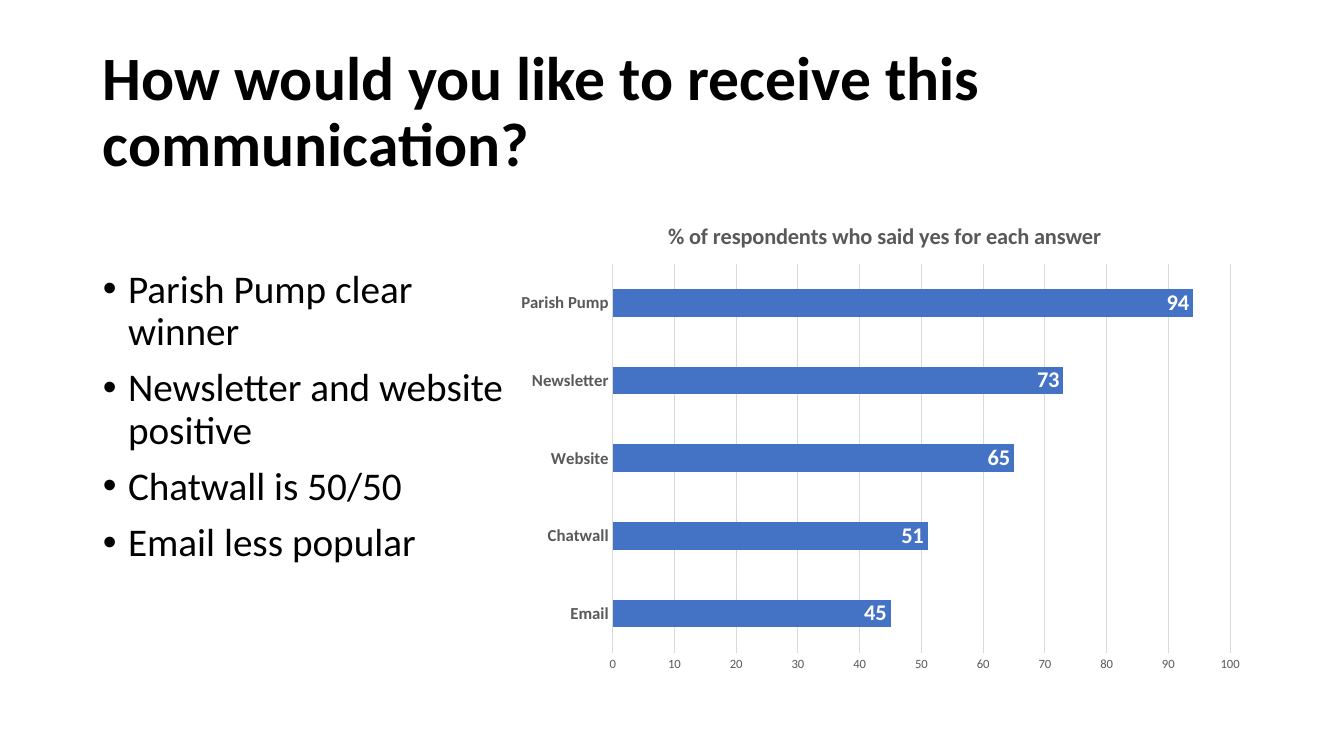
from lxml import etree
from pptx import Presentation
from pptx.chart.data import CategoryChartData
from pptx.dml.color import RGBColor
from pptx.enum.chart import XL_CHART_TYPE, XL_LABEL_POSITION, XL_TICK_MARK
from pptx.enum.text import MSO_ANCHOR, MSO_AUTO_SIZE, PP_ALIGN
from pptx.oxml.ns import qn
from pptx.util import Inches, Pt

COLORS = {"text": "000000", "axis": "595959", "grid": "D9D9D9",
          "bar": "4472C4", "label": "FFFFFF"}
ANSWERS = {"Email": 45, "Chatwall": 51, "Website": 65,
           "Newsletter": 73, "Parish Pump": 94}
FINDINGS = ["Parish Pump clear winner", "Newsletter and website positive",
            "Chatwall is 50/50", "Email less popular"]


def style_font(font, size, color, bold=False):
    font.name = "Calibri"
    font.size = Pt(size)
    font.bold = bold
    font.color.rgb = RGBColor.from_string(COLORS[color])


def place(shape, left, top, width, height):
    shape.left, shape.top = Inches(left), Inches(top)
    shape.width, shape.height = Inches(width), Inches(height)


deck = Presentation()
deck.slide_width, deck.slide_height = Inches(13.33), Inches(7.5)
page = deck.slides.add_slide(deck.slide_layouts[1])

# Title
title = page.shapes.title
place(title, 0.92, 0.4, 11.5, 1.45)
title.text_frame.text = "How would you like to receive this communication?"
title.text_frame.auto_size = MSO_AUTO_SIZE.NONE
title.text_frame.vertical_anchor = MSO_ANCHOR.MIDDLE
heading = title.text_frame.paragraphs[0]
heading.alignment = PP_ALIGN.LEFT
heading.line_spacing = 0.9
style_font(heading.runs[0].font, 44, "text", bold=True)

# Findings
body = page.placeholders[1]
place(body, 0.92, 2, 4.21, 4.76)
frame = body.text_frame
frame.text = "\n".join(FINDINGS)
frame.auto_size = MSO_AUTO_SIZE.NONE
frame.margin_top = Inches(0.67)
for index, para in enumerate(frame.paragraphs):
    para.line_spacing = 0.9
    para.space_before = Pt(10 if index else 0)
    style_font(para.runs[0].font, 28, "text")
    properties = para._p.get_or_add_pPr()
    properties.set("marL", str(Inches(0.25)))
    properties.set("indent", str(Inches(-0.25)))
    etree.SubElement(properties, qn("a:buFont")).set("typeface", "Arial")
    etree.SubElement(properties, qn("a:buChar")).set("char", "•")

# Bar chart
data = CategoryChartData()
data.categories = list(ANSWERS)
data.add_series("Series 1", list(ANSWERS.values()))
chart = page.shapes.add_chart(XL_CHART_TYPE.BAR_CLUSTERED, Inches(5.13), Inches(2),
                              Inches(7.29), Inches(4.76), data).chart
style_font(chart.font, 10, "text")
chart.has_legend = False
chart.has_title = True
chart.chart_title.include_in_layout = False
caption = chart.chart_title.text_frame.paragraphs[0]
caption.text = "% of respondents who said yes for each answer"
style_font(caption.runs[0].font, 16, "axis", bold=True)

answer_axis, percent_axis = chart.category_axis, chart.value_axis
for axis, size, bold in ((answer_axis, 12, True), (percent_axis, 9, False)):
    axis.major_tick_mark = axis.minor_tick_mark = XL_TICK_MARK.NONE
    style_font(axis.tick_labels.font, size, "axis", bold)
percent_axis.minimum_scale, percent_axis.maximum_scale = 0, 100
percent_axis.major_unit = 10
percent_axis.format.line.fill.background()
percent_axis.has_major_gridlines = True
for line in (answer_axis.format.line, percent_axis.major_gridlines.format.line):
    line.color.rgb = RGBColor.from_string(COLORS["grid"])
    line.width = Pt(0.75)

plot = chart.plots[0]
plot.gap_width = 182
plot.vary_by_categories = False
bars = plot.series[0]
bars.format.fill.solid()
bars.format.fill.fore_color.rgb = RGBColor.from_string(COLORS["bar"])
labels = bars.data_labels
labels.show_value = True
labels.position = XL_LABEL_POSITION.INSIDE_END
style_font(labels.font, 16, "label", bold=True)

# Inner plot area, as fractions of the chart
plot_area = chart._chartSpace.chart.plotArea
for old_layout in plot_area.findall(qn("c:layout")):
    plot_area.remove(old_layout)
layout = etree.Element(qn("c:layout"))
plot_area.insert(0, layout)
manual = etree.SubElement(layout, qn("c:manualLayout"))
for tag, value in (("layoutTarget", "inner"), ("xMode", "edge"), ("yMode", "edge"),
                   ("x", "0.13"), ("y", "0.13"), ("w", "0.84"), ("h", "0.81")):
    etree.SubElement(manual, qn(f"c:{tag}")).set("val", value)

deck.save("out.pptx")
